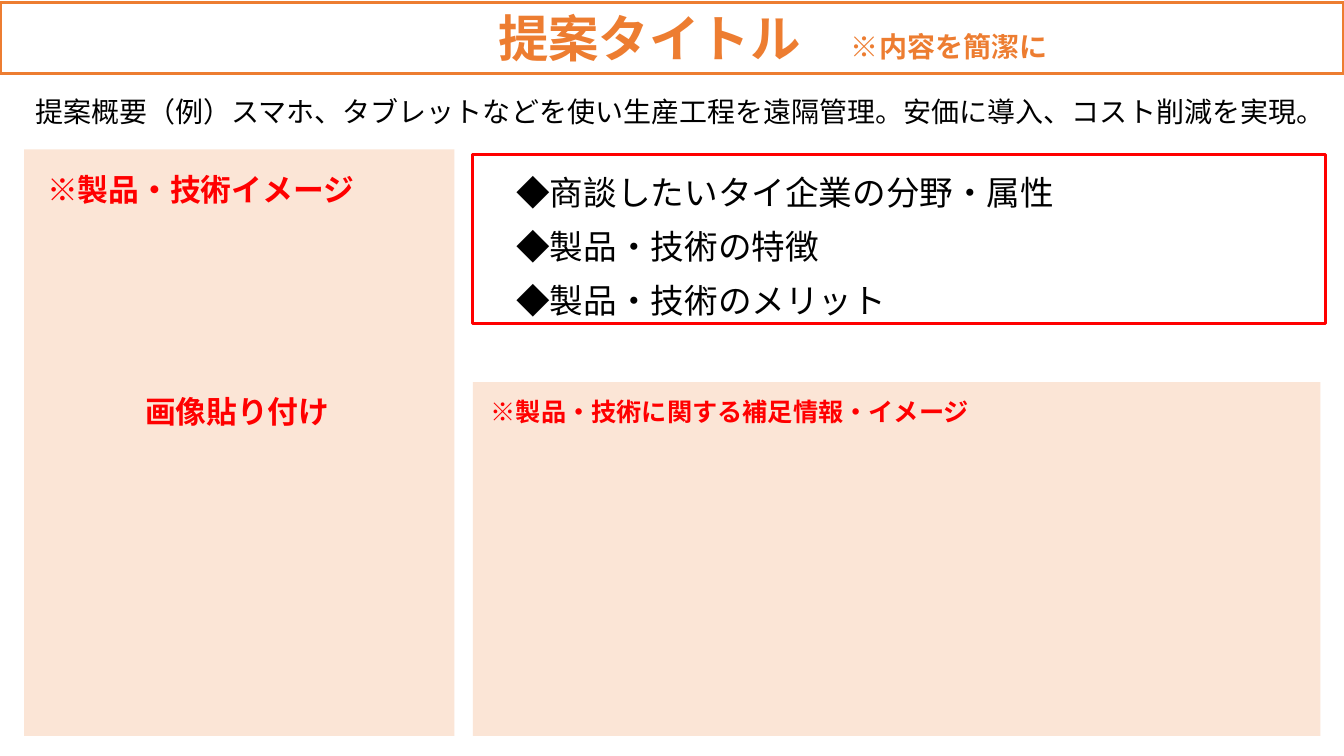
from dataclasses import dataclass

from lxml.etree import SubElement
from pptx import Presentation
from pptx.dml.color import RGBColor
from pptx.enum.shapes import MSO_SHAPE
from pptx.enum.text import MSO_ANCHOR, MSO_AUTO_SIZE, PP_ALIGN
from pptx.oxml.ns import qn
from pptx.util import Pt


@dataclass(frozen=True)
class Theme:
    orange: RGBColor = RGBColor(0xED, 0x7D, 0x31)
    red: RGBColor = RGBColor(0xFF, 0x00, 0x00)
    black: RGBColor = RGBColor(0x00, 0x00, 0x00)
    peach: RGBColor = RGBColor(0xFB, 0xE5, 0xD6)
    japanese: str = "Noto Sans CJK JP"
    latin: str = "Calibri"
    title: int = 36
    points: int = 24
    label: int = 22
    summary: int = 20
    small_label: int = 18
    border: float = 2.25


THEME = Theme()


def style_run(span, size, color, bold=False, name=THEME.japanese):
    """Format a run, with the same typeface for Latin and East Asian text."""
    span.font.size = Pt(size)
    span.font.bold = bold
    span.font.color.rgb = color
    span.font.name = name
    SubElement(span.font._element, qn("a:ea"), typeface=name)


def prepare_frame(frame, left_inset=7.2):
    frame.word_wrap = True
    frame.auto_size = MSO_AUTO_SIZE.NONE
    frame.vertical_anchor = MSO_ANCHOR.MIDDLE
    frame.margin_left, frame.margin_right = Pt(left_inset), Pt(0)
    frame.margin_top = frame.margin_bottom = Pt(3.6)


def place(shape, left, top, width, height):
    shape.left, shape.top = Pt(left), Pt(top)
    shape.width, shape.height = Pt(width), Pt(height)


def outline(shape, color):
    shape.line.color.rgb = color
    shape.line.width = Pt(THEME.border)


def add_rectangle(page, area):
    box = page.shapes.add_shape(MSO_SHAPE.RECTANGLE, *map(Pt, area))
    box.shadow.inherit = False
    return box


def add_panel(page, area):
    panel = add_rectangle(page, area)
    panel.fill.solid()
    panel.fill.fore_color.rgb = THEME.peach
    panel.line.fill.background()


def add_label(page, area, text, size, color=THEME.red, bold=True):
    box = page.shapes.add_textbox(*map(Pt, area))
    prepare_frame(box.text_frame)
    box.text_frame.text = text
    style_run(box.text_frame.paragraphs[0].runs[0], size, color, bold)


def fill_title(page, heading, hint):
    title = page.shapes.title
    place(title, 0, 1.5, 960, 51)
    outline(title, THEME.orange)
    prepare_frame(title.text_frame, left_inset=151.2)
    title.text_frame.margin_right = Pt(7.2)
    para = title.text_frame.paragraphs[0]
    para.alignment = PP_ALIGN.CENTER
    for text, size in ((heading, THEME.title), (hint, THEME.summary)):
        span = para.add_run()
        span.text = text
        style_run(span, size, THEME.orange, bold=True)


def add_points(page, area, points):
    box = add_rectangle(page, area)
    box.fill.background()
    outline(box, THEME.red)
    prepare_frame(box.text_frame, left_inset=31.2)
    box.text_frame.text = "\n".join(points)
    for para in box.text_frame.paragraphs:
        para.alignment = PP_ALIGN.LEFT
        para.line_spacing = Pt(38.6)
        style_run(para.runs[0], THEME.points, THEME.black, name=THEME.latin)


def main():
    deck = Presentation()
    deck.slide_width, deck.slide_height = Pt(960), Pt(540)
    page = deck.slides.add_slide(deck.slide_layouts[5])

    fill_title(page, "提案タイトル　", "※内容を簡潔に")
    add_points(page, (337.7, 110.2, 609.1, 121), (
        "◆商談したいタイ企業の分野・属性",
        "◆製品・技術の特徴",
        "◆製品・技術のメリット",
    ))
    add_label(page, (18, 64, 936, 31.7),
              "提案概要（例）スマホ、タブレットなどを使い生産工程を遠隔管理。安価に導入、コスト削減を実現。",
              THEME.summary, THEME.black, bold=False)
    add_panel(page, (17.3, 106.6, 307.4, 419))
    add_label(page, (26.6, 118, 237.6, 33.8), "※製品・技術イメージ", THEME.label)
    add_panel(page, (337.7, 272.9, 605.5, 252.7))
    add_label(page, (343.4, 279.4, 358, 28.8),
              "※製品・技術に関する補足情報・イメージ", THEME.small_label)
    add_label(page, (96.5, 276.5, 162, 33.8), "画像貼り付け", THEME.label)

    deck.save("out.pptx")


if __name__ == "__main__":
    main()
